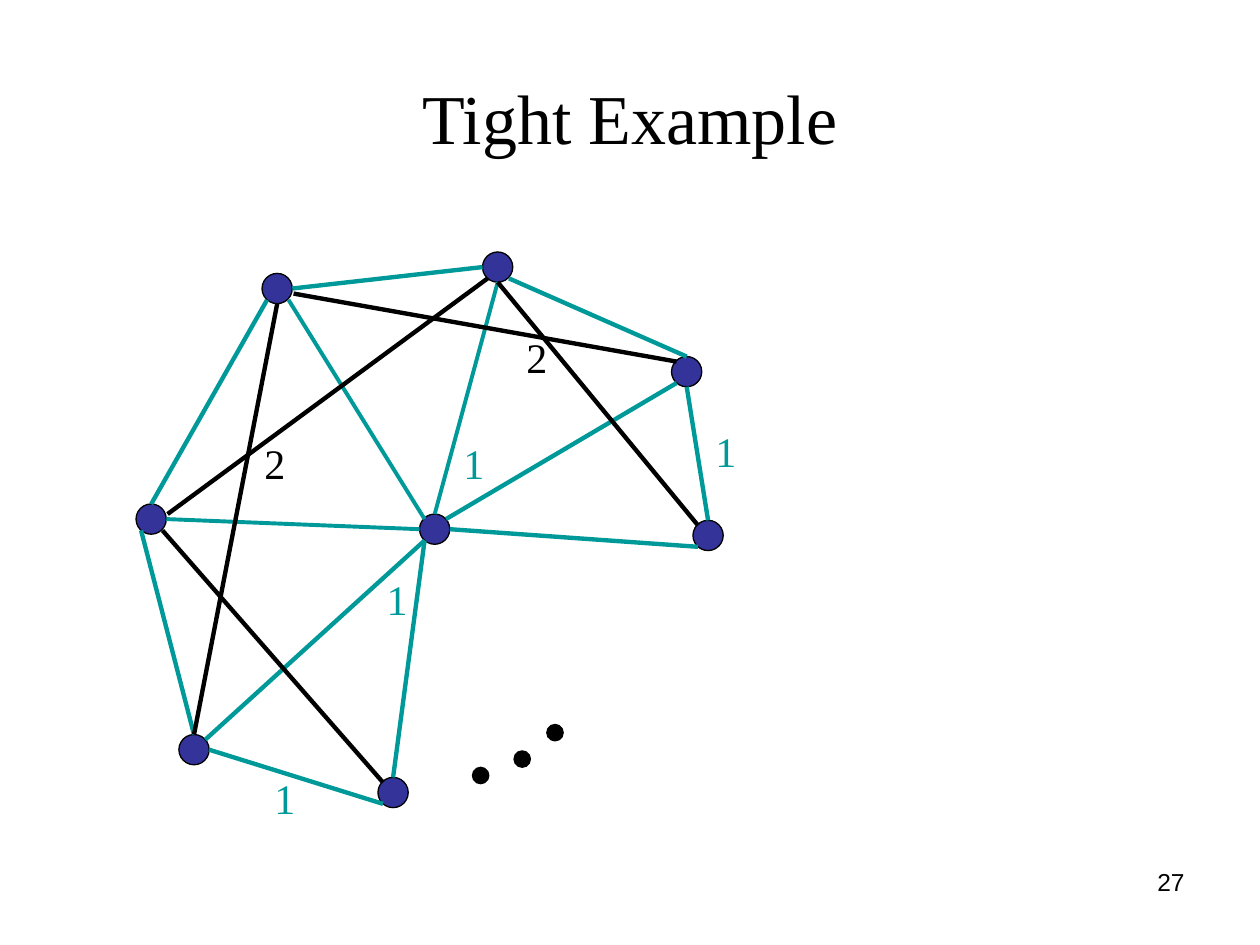
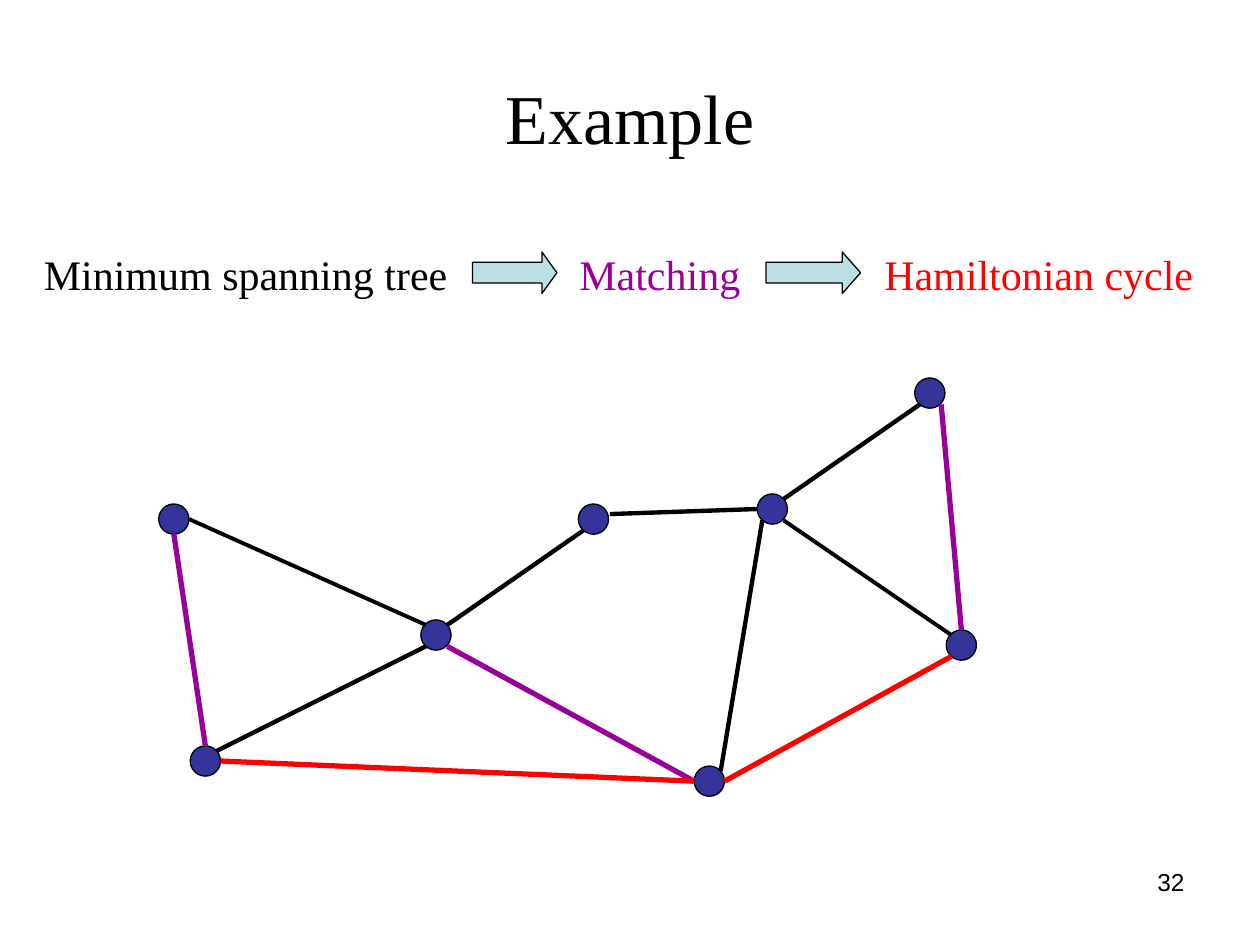
from dataclasses import dataclass

from lxml import etree
from pptx import Presentation
from pptx import util as u
from pptx.dml.color import RGBColor
from pptx.enum import shapes, text
from pptx.oxml.ns import qn

SCALE = 9144


def px(length):
    return u.Emu(length * SCALE)


@dataclass(frozen=True)
class Theme:
    ink: str = "000000"
    node: str = "333399"
    teal: str = "009999"
    purple: str = "990099"
    red: str = "FF0000"
    pale: str = "BBE0E3"
    serif: str = "Times New Roman"
    sans: str = "Arial"
    title_size: int = 40
    label_size: int = 24
    number_size: int = 14
    outline: float = 0.75
    thin: float = 2.25
    medium: float = 2.5
    thick: float = 3


THEME = Theme()
NODE_SIZE = 24
PORTS = {
    "n": (0, -12), "e": (12, 0), "s": (0, 12), "w": (-12, 0),
    "ne": (9, -8), "se": (9, 9), "sw": (-8, 9), "nw": (-8, -8),
    "ene": (13, -4), "ese": (13, 4),
}


class Painter:
    def __init__(self, deck, theme):
        self.deck = deck
        self.theme = theme
        self.page = None

    def start_page(self, title, number):
        theme = self.theme
        self.page = self.deck.slides.add_slide(self.deck.slide_layouts[6])
        self.label(number, 717, 683, 233, 52, font=theme.sans,
                   size=theme.number_size, align=text.PP_ALIGN.RIGHT, wrap=True)
        self.label(title, 50, 30, 900, 125, size=theme.title_size, wrap=True,
                   align=text.PP_ALIGN.CENTER, anchor=text.MSO_ANCHOR.MIDDLE)

    def label(self, words, left, top, width, height=50, *, font=None, size=None,
              color=None, align=text.PP_ALIGN.LEFT, anchor=text.MSO_ANCHOR.TOP,
              wrap=False):
        box = self.page.shapes.add_textbox(px(left), px(top), px(width), px(height))
        frame = box.text_frame
        frame.word_wrap = wrap
        frame.vertical_anchor = anchor
        if not wrap:
            frame.auto_size = text.MSO_AUTO_SIZE.SHAPE_TO_FIT_TEXT
        para = frame.paragraphs[0]
        para.alignment = align
        span = para.add_run()
        span.text = words
        span.font.name = font or self.theme.serif
        span.font.size = u.Pt(size or self.theme.label_size)
        span.font.color.rgb = RGBColor.from_string(color or self.theme.ink)

    def shape(self, kind, left, top, width, height, fill):
        shape = self.page.shapes.add_shape(kind, px(left), px(top), px(width), px(height))
        shape.shadow.inherit = False
        shape.fill.solid()
        shape.fill.fore_color.rgb = RGBColor.from_string(fill)
        shape.line.color.rgb = RGBColor.from_string(self.theme.ink)
        shape.line.width = u.Pt(self.theme.outline)
        return shape

    def circle(self, left, top, size, fill):
        self.shape(shapes.MSO_SHAPE.OVAL, left, top, size, size, fill)

    def arrow(self, left, top, width, height, head):
        arrow = self.shape(shapes.MSO_SHAPE.RIGHT_ARROW, left, top, width, height,
                           self.theme.pale)
        arrow.adjustments[1] = head

    def nodes(self, centers):
        for x, y in centers.values():
            self.circle(x - NODE_SIZE // 2, y - NODE_SIZE // 2, NODE_SIZE, self.theme.node)

    def edges(self, centers, links, color, width):
        for link in links:
            start, start_port, end, end_port = link.split()
            ends = []
            for name, port in ((start, start_port), (end, end_port)):
                ends += [px(c + d) for c, d in zip(centers[name], PORTS[port])]
            line = self.page.shapes.add_connector(shapes.MSO_CONNECTOR.STRAIGHT, *ends)
            line.line.color.rgb = RGBColor.from_string(color)
            line.line.width = u.Pt(width)
            etree.SubElement(line._element.spPr, qn("a:effectLst"))


def tight_example(painter):
    theme = painter.theme
    painter.start_page("Tight Example", "27")
    centers = {
        "hub": (345, 420), "top": (395, 212), "upper_right": (545, 295),
        "lower_left": (154, 595), "upper_left": (220, 229), "left": (120, 412),
        "right": (562, 425), "bottom": (312, 629),
    }
    painter.nodes(centers)
    painter.edges(centers, [
        "hub sw lower_left ne", "top w upper_left e", "upper_right n top se",
        "left sw lower_left n", "hub ne upper_right sw", "upper_left sw left n",
        "right n upper_right s", "hub e right sw", "bottom n hub sw",
        "lower_left e bottom sw",
    ], theme.teal, theme.medium)
    painter.edges(centers, ["hub n top s", "hub nw upper_left se", "hub w left e"],
                  theme.teal, theme.thin)
    for cost, left, top, color in (
        ("2", 200, 342, theme.ink), ("2", 408, 258, theme.ink),
        ("1", 208, 608, theme.teal), ("1", 358, 342, theme.teal),
        ("1", 297, 450, theme.teal), ("1", 558, 333, theme.teal),
    ):
        painter.label(cost, left, top, 37, color=color)
    painter.edges(centers, [
        "left se bottom nw", "lower_left n upper_left s", "left ene top sw",
        "upper_left ese upper_right nw", "top s right nw",
    ], theme.ink, theme.medium)
    for left, top in ((408, 596), (375, 609), (434, 575)):
        painter.circle(left, top, 13, theme.ink)


def cycle_example(painter):
    theme = painter.theme
    painter.start_page("Example", "32")
    for step, left, width, color in (
        ("Minimum spanning tree", 25, 343, theme.ink),
        ("Matching", 450, 149, theme.purple),
        ("Hamiltonian cycle", 692, 267, theme.red),
    ):
        painter.label(step, left, 192, width, color=color)
    painter.arrow(375, 200, 67, 33, 0.36)
    painter.arrow(608, 200, 75, 33, 0.44)
    centers = {
        "left": (138, 412), "fork": (346, 504), "middle": (471, 412),
        "lower_left": (163, 604), "right": (763, 512), "hub": (613, 404),
        "top": (738, 312), "bottom": (563, 620),
    }
    painter.nodes(centers)
    painter.edges(centers, [
        "fork sw lower_left ne", "fork ne middle sw", "hub sw bottom ne",
        "hub ne top sw", "middle ene hub w",
    ], theme.ink, theme.medium)
    painter.edges(centers, ["fork nw left e", "hub se right nw"], theme.ink, theme.thin)
    painter.edges(centers, ["lower_left n left s", "bottom w fork se", "top se right n"],
                  theme.purple, theme.thick)
    painter.edges(centers, ["right sw bottom e", "bottom w lower_left e"],
                  theme.red, theme.thick)


def main():
    deck = Presentation()
    deck.slide_width, deck.slide_height = px(1000), px(750)
    painter = Painter(deck, THEME)
    tight_example(painter)
    cycle_example(painter)
    deck.save("out.pptx")


if __name__ == "__main__":
    main()
